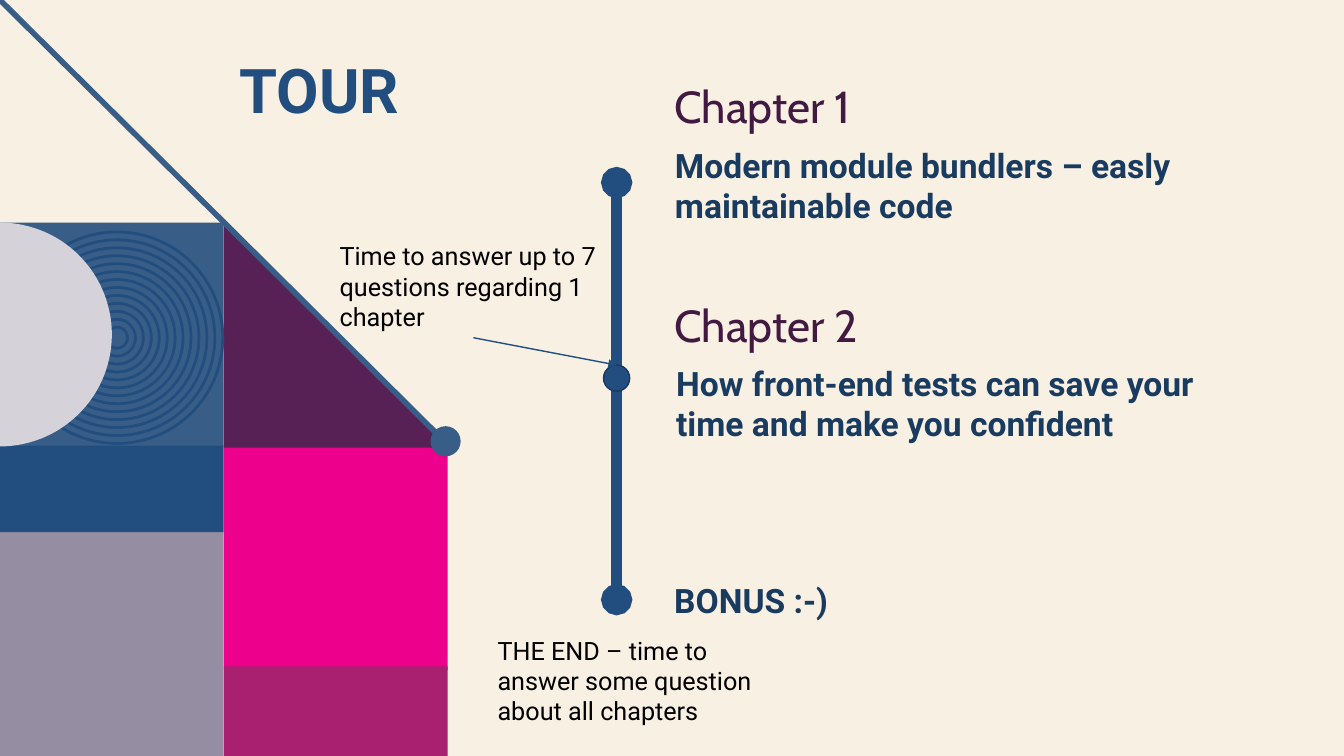
import math

from lxml import etree
from pptx import Presentation
from pptx import util as u
from pptx.dml.color import RGBColor
from pptx.enum import shapes, text
from pptx.oxml.ns import qn

BACKGROUND, BLUE, STEEL, NAVY = "F8F0E3", "224E7F", "385E88", "193B5F"
TILE = 5.64

HEADING = ("Cabin", 32, "421940", False)
TOPIC = ("Roboto", 24, NAVY, True)
NOTE = ("Roboto", 18, "000000", False)

TITLE = (5.79, 1.4, 17.63, 3.68, ["TOUR"], ("Roboto", 44, BLUE, True), False)
TEXTS = [
    (16.74, 1.85, 5.38, 1.63, ["Chapter 1"], HEADING, False),
    (16.76, 3.53, 14, 2.31, ["Modern module bundlers – easly", "maintainable code"], TOPIC, False),
    (16.74, 7.39, 5.54, 1.63, ["Chapter 2"], HEADING, False),
    (16.79, 9.02, 14.96, 2.31, ["How front-end tests can save your", "time and make you confident"], TOPIC, False),
    (16.74, 14.48, 4.7, 1.27, ["BONUS :-)"], TOPIC, False),
    (12.29, 15.88, 7.24, 2.57, ["THE END – time to answer some question about all chapters"], NOTE, True),
]
QUESTION_NOTE = (8.31, 5.94, 7.24, 2.57, ["Time to answer up to 7 questions regarding 1 chapter"], NOTE, True)

TILES = [
    (0, 5.61, TILE, STEEL),
    (TILE, 11.25, TILE, "EC008C"),
    (TILE, 16.79, 2.26, "AA2070"),
    (0, 13.41, TILE, "958EA2"),
]
BLUE_BAND = (0, 11.23, 2.18, BLUE)
TRIANGLE = [(TILE, TILE), (2 * TILE, 2 * TILE), (TILE, 2 * TILE)]
RING_CENTER, RING_LARGEST, RING_STEP, RING_COUNT = (2.95, 8.51), 5.33, 0.4, 13
HALF_DISC_CENTER_Y, HALF_DISC_RADIUS = 8.43, 2.82
TIMELINE_X, TIMELINE_TOP, TIMELINE_BOTTOM = 15.54, 4.6, 15.11


def color(value):
    return RGBColor.from_string(value)


def paint(shape, fill=None, line=None, width=1):
    shape.shadow.inherit = False
    if fill:
        shape.fill.solid()
        shape.fill.fore_color.rgb = color(fill)
    else:
        shape.fill.background()
    if line:
        shape.line.color.rgb = color(line)
        shape.line.width = u.Pt(width)
    else:
        shape.line.fill.background()
    return shape


def add_tile(left, top, height, fill):
    shape = slide.shapes.add_shape(
        shapes.MSO_SHAPE.RECTANGLE, u.Cm(left), u.Cm(top), u.Cm(TILE), u.Cm(height))
    paint(shape, fill)


def add_circle(x, y, diameter, fill=None, line=None, width=1):
    shape = slide.shapes.add_shape(
        shapes.MSO_SHAPE.OVAL, u.Cm(x - diameter / 2), u.Cm(y - diameter / 2),
        u.Cm(diameter), u.Cm(diameter))
    return paint(shape, fill, line, width)


def add_polygon(points, fill):
    corners = [(u.Cm(x), u.Cm(y)) for x, y in points]
    builder = slide.shapes.build_freeform(*corners[0])
    builder.add_line_segments(corners[1:], close=True)
    paint(builder.convert_to_shape(), fill)


def add_line(x1, y1, x2, y2, line, width, head=None, tail=None):
    connector = slide.shapes.add_connector(
        shapes.MSO_CONNECTOR.STRAIGHT, u.Cm(x1), u.Cm(y1), u.Cm(x2), u.Cm(y2))
    connector.line.color.rgb = color(line)
    connector.line.width = u.Pt(width)
    outline = connector.line._get_or_add_ln()
    for tag, kind in (("a:headEnd", head), ("a:tailEnd", tail)):
        if kind:
            etree.SubElement(outline, qn(tag), type=kind)
    etree.SubElement(connector._element.spPr, qn("a:effectLst"))
    return connector


def add_text(left, top, width, height, lines, style, wrap):
    name, size, ink, bold = style
    box = slide.shapes.add_textbox(u.Cm(left), u.Cm(top), u.Cm(width), u.Cm(height))
    frame = box.text_frame
    frame.word_wrap = wrap
    frame.vertical_anchor = text.MSO_ANCHOR.TOP
    frame.text = "\n".join(lines)
    for paragraph in frame.paragraphs:
        paragraph.alignment = text.PP_ALIGN.LEFT
        paragraph.font.name = name
        paragraph.font.size = u.Pt(size)
        paragraph.font.bold = bold
        paragraph.font.color.rgb = color(ink)
    return box


presentation = Presentation()
presentation.slide_width, presentation.slide_height = u.Cm(33.87), u.Cm(19.05)
slide = presentation.slides.add_slide(presentation.slide_layouts[6])
slide.background.fill.solid()
slide.background.fill.fore_color.rgb = color(BACKGROUND)

for tile in TILES:
    add_tile(*tile)
add_polygon(TRIANGLE, "582156")
for ring in range(RING_COUNT):
    add_circle(*RING_CENTER, RING_LARGEST - ring * RING_STEP, line=BLUE, width=2)
add_tile(*BLUE_BAND)
angles = [math.radians(degree) for degree in range(-90, 91, 3)]
add_polygon([(HALF_DISC_RADIUS * math.cos(angle),
              HALF_DISC_CENTER_Y + HALF_DISC_RADIUS * math.sin(angle)) for angle in angles], "D5D2DA")
add_line(0, 0, 11.28, 11.2, STEEL, 4)
add_circle(11.23, 11.12, 0.76, STEEL)

title = add_text(*TITLE)
title.text_frame.paragraphs[0].line_spacing = 0.9
add_line(TIMELINE_X, TIMELINE_TOP, TIMELINE_X, TIMELINE_BOTTOM, BLUE, 7.5, "oval", "oval")
question_stop = add_circle(TIMELINE_X, 9.53, 0.66, BLUE, "193A5E")
for entry in TEXTS:
    add_text(*entry)
question_note = add_text(*QUESTION_NOTE)
arrow = add_line(11.93, 8.51, TIMELINE_X, 9.2, BLUE, 1, tail="triangle")
arrow.begin_connect(question_note, 2)
arrow.end_connect(question_stop, 0)

presentation.save("out.pptx")
